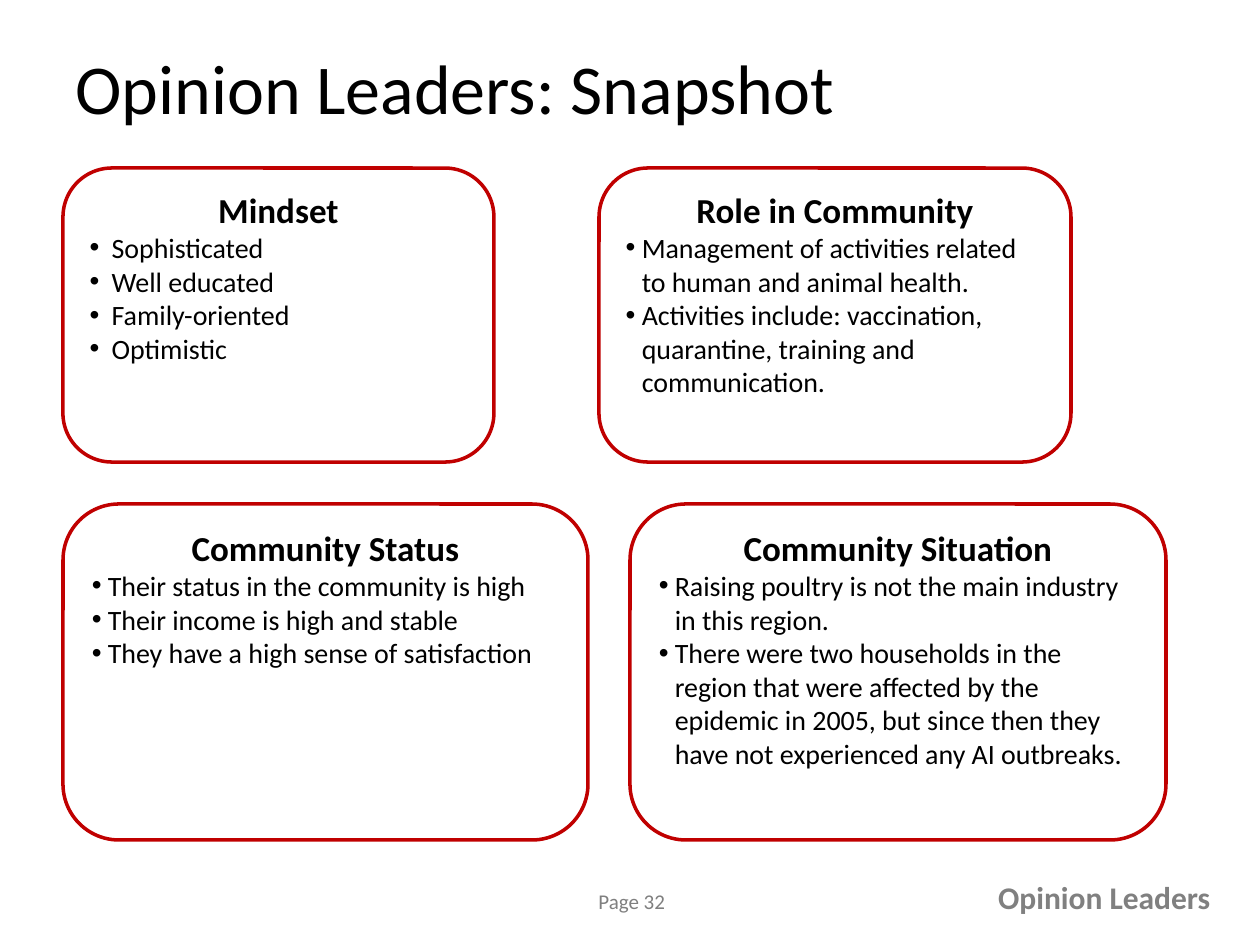
from dataclasses import dataclass

import pptx
import pptx.dml.color
import pptx.enum.shapes
import pptx.enum.text
import pptx.oxml
import pptx.oxml.ns
import pptx.util
from lxml import etree

ALIGN = pptx.enum.text.PP_ALIGN
ANCHOR = pptx.enum.text.MSO_ANCHOR
EMU_PER_PX = 914400 // 126


def px(length: int) -> pptx.util.Emu:
    return pptx.util.Emu(round(length * 914400 / 126))


def rgb(value: str) -> pptx.dml.color.RGBColor:
    return pptx.dml.color.RGBColor.from_string(value)


@dataclass(frozen=True)
class Theme:
    font: str = "Calibri"
    ink: str = "000000"
    border: str = "C00000"
    page_gray: str = "7F7F7F"
    footer_gray: str = "808080"
    title_size: int = 40
    heading_size: int = 20
    footer_size: int = 18
    body_size: int = 16
    page_size: int = 12
    border_width: int = 2


@dataclass(frozen=True)
class Box:
    left: int
    top: int
    width: int
    height: int


@dataclass(frozen=True)
class Card:
    box: Box
    heading: str
    points: tuple[str, ...]
    indent: int = 16


@dataclass(frozen=True)
class Label:
    box: Box
    text: str
    size: int
    color: str
    bold: bool = False
    align: ALIGN = ALIGN.LEFT
    anchor: ANCHOR = ANCHOR.TOP
    wrap: bool = False


THEME = Theme()
LEFT = 63
TOP_ROW, TOP_HEIGHT = 168, 294
BOTTOM_ROW, BOTTOM_HEIGHT = 504, 336

CARDS = (
    Card(Box(LEFT, TOP_ROW, 431, TOP_HEIGHT), "Mindset",
         ("Sophisticated", "Well educated", "Family-oriented", "Optimistic"),
         indent=22),
    Card(Box(599, TOP_ROW, 472, TOP_HEIGHT), "Role in Community",
         ("Management of activities related to human and animal health.",
          "Activities include: vaccination, quarantine, training and communication.")),
    Card(Box(LEFT, BOTTOM_ROW, 525, BOTTOM_HEIGHT), "Community Status",
         ("Their status in the community is high",
          "Their income is high and stable",
          "They have a high sense of satisfaction")),
    Card(Box(630, BOTTOM_ROW, 536, BOTTOM_HEIGHT), "Community Situation",
         ("Raising poultry is not the main industry in this region.",
          "There were two households in the region that were affected by the "
          "epidemic in 2005, but since then they have not experienced any AI "
          "outbreaks.")),
)

LABELS = (
    Label(Box(LEFT, 38, 1134, 98), "Opinion Leaders: Snapshot",
          THEME.title_size, THEME.ink, anchor=ANCHOR.MIDDLE, wrap=True),
    Label(Box(586, 882, 97, 38), "Page 32", THEME.page_size, THEME.page_gray),
    Label(Box(984, 872, 239, 50), "Opinion Leaders", THEME.footer_size,
          THEME.footer_gray, bold=True, align=ALIGN.RIGHT),
)


def place(box: Box) -> tuple[pptx.util.Emu, ...]:
    return px(box.left), px(box.top), px(box.width), px(box.height)


def write(paragraph, text: str, size: int, color: str, bold: bool, align: ALIGN) -> None:
    paragraph.alignment = align
    run = paragraph.add_run()
    run.text = text
    formats = {"name": THEME.font, "size": pptx.util.Pt(size), "bold": bold}
    for name, value in formats.items():
        setattr(run.font, name, value)
    run.font.color.rgb = rgb(color)


def add_bullet(paragraph, indent: int) -> None:
    properties = paragraph._p.get_or_add_pPr()
    properties.set("marL", str(px(indent)))
    properties.set("indent", str(-px(indent)))
    for tag, attribute, value in (("a:buFont", "typeface", "Arial"),
                                  ("a:buChar", "char", "•")):
        etree.SubElement(properties, pptx.oxml.ns.qn(tag)).set(attribute, value)


def draw_label(slide, label: Label) -> None:
    frame = slide.shapes.add_textbox(*place(label.box)).text_frame
    formats = {"word_wrap": label.wrap, "vertical_anchor": label.anchor}
    for name, value in formats.items():
        setattr(frame, name, value)
    write(frame.paragraphs[0], label.text, label.size, label.color,
          label.bold, label.align)


def draw_card(slide, card: Card) -> None:
    shape = slide.shapes.add_shape(
        pptx.enum.shapes.MSO_SHAPE.ROUNDED_RECTANGLE, *place(card.box))
    shape.shadow.inherit = False
    shape.fill.background()
    shape.line.color.rgb = rgb(THEME.border)
    shape.line.width = pptx.util.Pt(THEME.border_width)

    frame = shape.text_frame
    frame.word_wrap = True
    frame.vertical_anchor = ANCHOR.TOP
    write(frame.paragraphs[0], card.heading, THEME.heading_size, THEME.ink,
          True, ALIGN.CENTER)
    for point in card.points:
        paragraph = frame.add_paragraph()
        write(paragraph, point, THEME.body_size, THEME.ink, False, ALIGN.LEFT)
        add_bullet(paragraph, card.indent)


def main() -> None:
    presentation = pptx.Presentation()
    presentation.slide_width = px(1260)
    presentation.slide_height = px(945)
    slide = presentation.slides.add_slide(presentation.slide_layouts[6])

    # Title, page number and footer
    for label in LABELS:
        draw_label(slide, label)

    # Four snapshot cards
    for card in CARDS:
        draw_card(slide, card)

    presentation.save("out.pptx")


if __name__ == "__main__":
    main()
